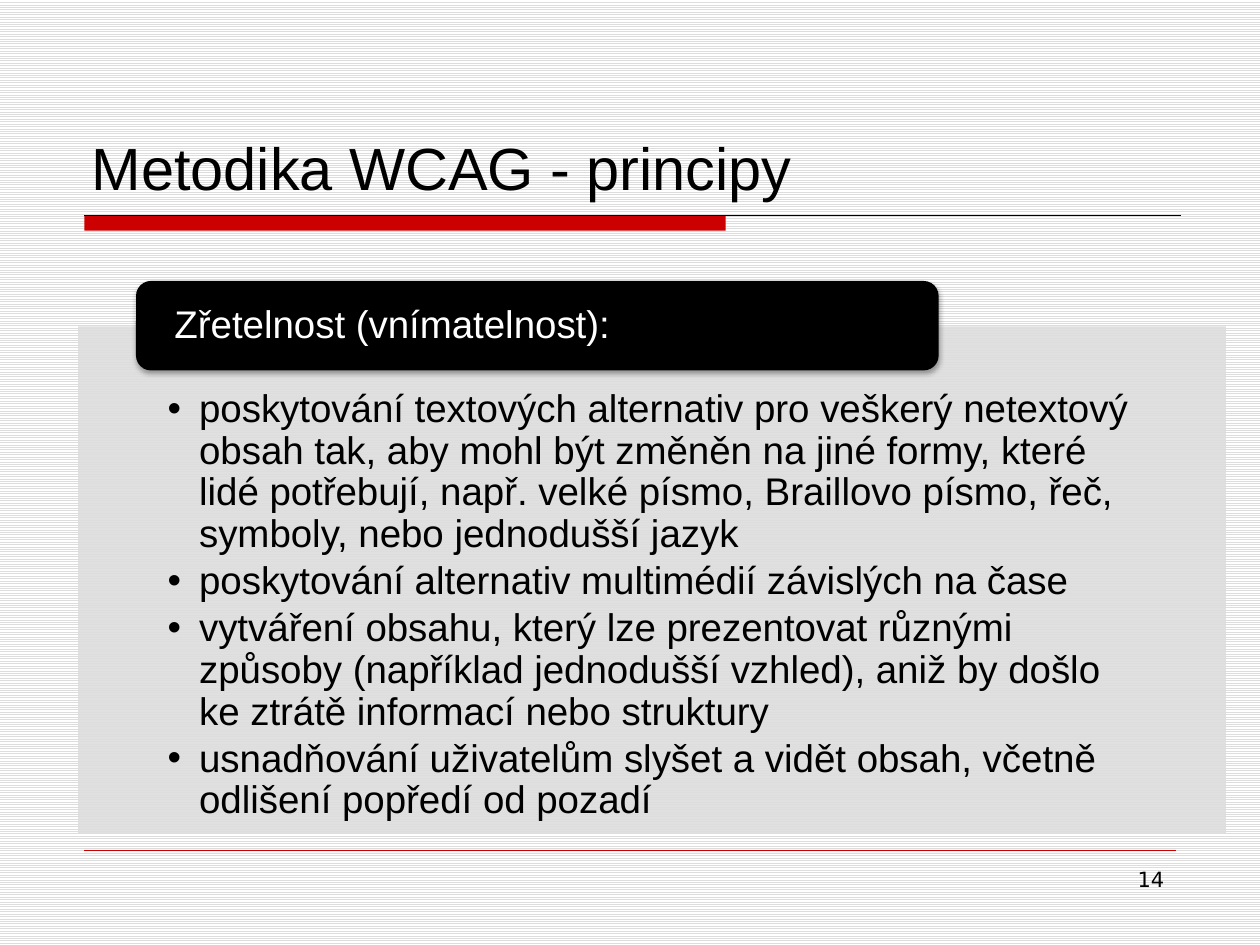
from dataclasses import dataclass

from lxml import etree
from pptx import Presentation
from pptx.dml.color import RGBColor
from pptx.enum import dml, shapes, text
from pptx.oxml import ns
from pptx.util import Inches, Pt


@dataclass(frozen=True)
class Theme:
    ink: RGBColor = RGBColor(0, 0, 0)
    paper: RGBColor = RGBColor(255, 255, 255)
    mist: RGBColor = RGBColor(0xDD, 0xDD, 0xDD)
    accent: RGBColor = RGBColor(0xCC, 0, 0)
    font: str = "Arial"
    number_font: str = "DejaVu Sans"
    title_size: int = 34
    body_size: int = 22
    number_size: int = 12


def add_xml(parent, tag, **attributes):
    return etree.SubElement(parent, ns.qn(tag), attributes)


class SlideBuilder:
    def __init__(self, slide, theme):
        self.slide = slide
        self.theme = theme

    def background(self):
        fill = self.slide.background.fill
        fill.patterned()
        fill.pattern = dml.MSO_PATTERN.LIGHT_HORIZONTAL
        fill.fore_color.rgb = self.theme.mist
        fill.back_color.rgb = self.theme.paper

    def place(self, item, box):
        item.left, item.top, item.width, item.height = map(Inches, box)

    def frame(self, item, anchor, insets=(0.1, 0.05, 0.1, 0.05)):
        frame = item.text_frame
        frame.word_wrap = True
        frame.auto_size = text.MSO_AUTO_SIZE.NONE
        frame.vertical_anchor = anchor
        frame.margin_left, frame.margin_top, frame.margin_right, frame.margin_bottom = map(Inches, insets)
        return frame

    def style(self, paragraph, size, color, font=None, align=text.PP_ALIGN.LEFT):
        paragraph.alignment = align
        for run in paragraph.runs:
            run.font.size = Pt(size)
            run.font.name = font or self.theme.font
            run.font.color.rgb = color

    def title(self, wording, box):
        heading = self.slide.shapes.title
        self.place(heading, box)
        frame = self.frame(heading, text.MSO_ANCHOR.BOTTOM)
        frame.text = wording
        self.style(frame.paragraphs[0], self.theme.title_size, self.theme.ink)

    def block(self, kind, box, color):
        block = self.slide.shapes.add_shape(kind, *map(Inches, box))
        block.shadow.inherit = False
        block.fill.solid()
        block.fill.fore_color.rgb = color
        block.line.fill.background()
        return block

    def panel(self, box):
        panel = self.block(shapes.MSO_SHAPE.RECTANGLE, box, self.theme.mist)
        tint = panel._element.spPr.find(ns.qn("a:solidFill"))[0]
        add_xml(tint, "a:alpha", val="90000")

    def tab(self, wording, box):
        tab = self.block(shapes.MSO_SHAPE.ROUNDED_RECTANGLE, box, self.theme.ink)
        effects = tab._element.spPr.find(ns.qn("a:effectLst"))
        shadow = add_xml(effects, "a:outerShdw", blurRad=str(Pt(3.1)), dist=str(Pt(1.8)),
                         dir="5400000", rotWithShape="0")
        add_xml(add_xml(shadow, "a:srgbClr", val=str(self.theme.ink)), "a:alpha", val="35000")
        frame = self.frame(tab, text.MSO_ANCHOR.MIDDLE, (0.27, 0, 0.27, 0))
        frame.text = wording
        frame.paragraphs[0].line_spacing = 0.9
        self.style(frame.paragraphs[0], self.theme.body_size, self.theme.paper)

    def bullets(self, items, box):
        body = self.slide.placeholders[1]
        self.slide.shapes._spTree.append(body._element)
        self.place(body, box)
        frame = self.frame(body, text.MSO_ANCHOR.TOP, (0.71, 0.5, 0.71, 0.17))
        frame.text = "\n".join(items)
        for paragraph in frame.paragraphs:
            paragraph.level = 1
            paragraph.line_spacing = 0.9
            paragraph.space_before = Pt(0)
            paragraph.space_after = Pt(3.3)
            properties = paragraph._p.get_or_add_pPr()
            properties.set("marL", str(Inches(0.25)))
            properties.set("indent", str(Inches(-0.25)))
            add_xml(properties, "a:buFont", typeface=self.theme.font)
            add_xml(properties, "a:buChar", char="•")
            self.style(paragraph, self.theme.body_size, self.theme.ink)

    def rule(self, left, right, y, color, weight):
        rule = self.slide.shapes.add_connector(
            shapes.MSO_CONNECTOR.STRAIGHT, Inches(left), Inches(y), Inches(right), Inches(y))
        rule.line.color.rgb = color
        rule.line.width = Pt(weight)
        add_xml(rule._element.spPr, "a:effectLst")

    def page_number(self, wording, box):
        number = self.slide.shapes.add_textbox(*map(Inches, box))
        frame = self.frame(number, text.MSO_ANCHOR.TOP)
        frame.text = wording
        self.style(frame.paragraphs[0], self.theme.number_size, self.theme.ink,
                   self.theme.number_font, text.PP_ALIGN.RIGHT)


def main():
    deck = Presentation()
    deck.slide_width, deck.slide_height = Inches(10), Inches(7.5)
    theme = Theme()
    builder = SlideBuilder(deck.slides.add_slide(deck.slide_layouts[1]), theme)
    panel_box = (0.62, 2.59, 9.11, 4.02)

    builder.background()
    builder.block(shapes.MSO_SHAPE.RECTANGLE, (0.67, 1.71, 5.09, 0.12), theme.accent)
    builder.rule(0.67, 9.37, 1.71, theme.ink, 0.75)
    builder.rule(0.67, 9.33, 6.75, theme.accent, 0.25)
    builder.page_number("14", (7.17, 6.83, 2.17, 0.52))
    builder.title("Metodika WCAG - principy", (0.63, 0.33, 8.75, 1.33))
    builder.panel(panel_box)
    builder.bullets([
        "poskytování textových alternativ pro veškerý netextový obsah tak, aby mohl být změněn "
        "na jiné formy, které lidé potřebují, např. velké písmo, Braillovo písmo, řeč, symboly, "
        "nebo jednodušší jazyk",
        "poskytování alternativ multimédií závislých na čase",
        "vytváření obsahu, který lze prezentovat různými způsoby (například jednodušší vzhled), "
        "aniž by došlo ke ztrátě informací nebo struktury",
        "usnadňování uživatelům slyšet a vidět obsah, včetně odlišení popředí od pozadí",
    ], panel_box)
    builder.tab("Zřetelnost (vnímatelnost):", (1.08, 2.23, 6.37, 0.71))
    deck.save("out.pptx")


if __name__ == "__main__":
    main()
